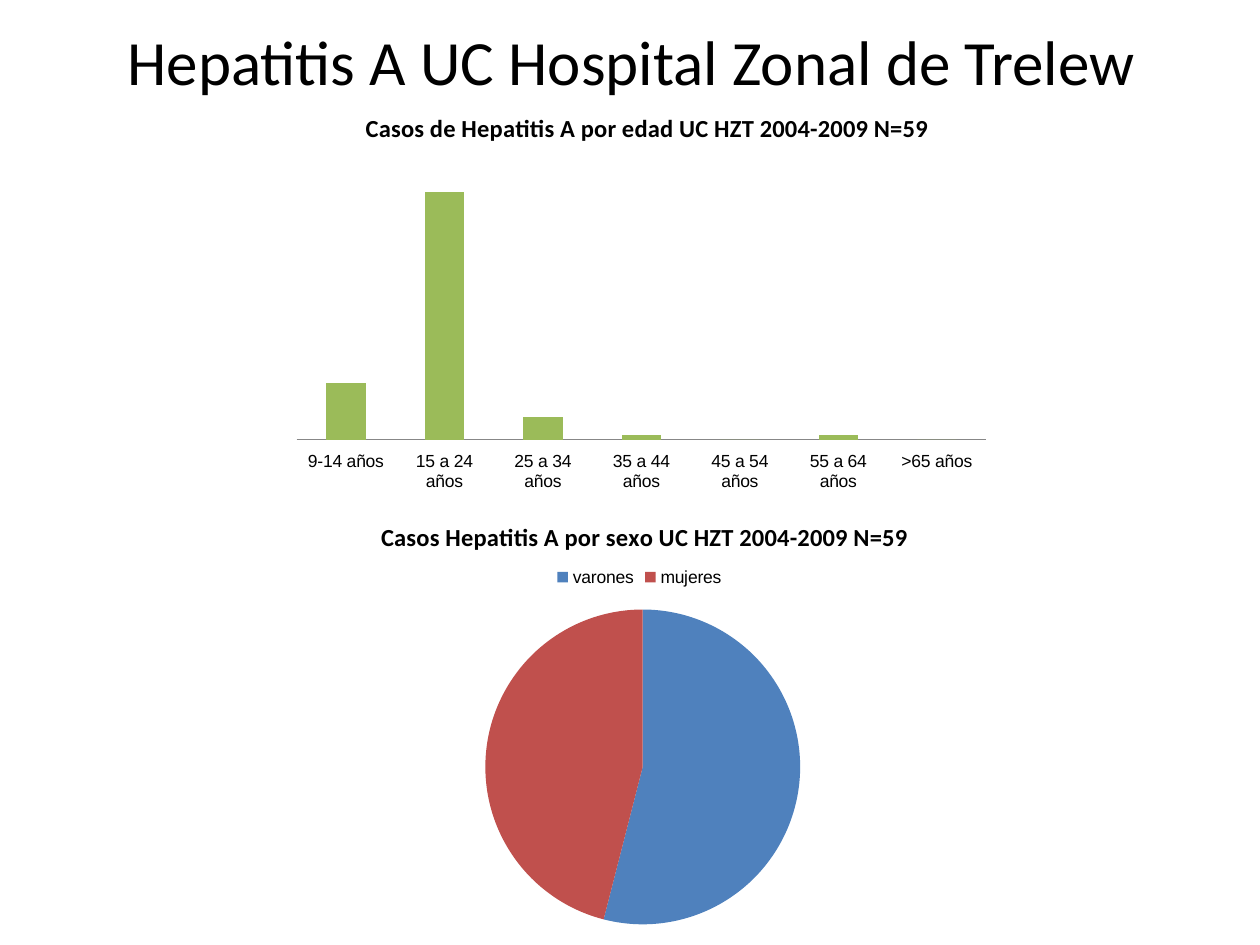
from dataclasses import dataclass

from lxml.etree import SubElement
from pptx import Presentation
from pptx.chart.chart import Chart
from pptx.chart.data import CategoryChartData
from pptx.dml.color import RGBColor
from pptx.enum.chart import XL_CHART_TYPE, XL_LEGEND_POSITION, XL_TICK_LABEL_POSITION, XL_TICK_MARK
from pptx.enum.text import MSO_ANCHOR, PP_ALIGN
from pptx.oxml import parse_xml
from pptx.oxml.ns import nsdecls, qn
from pptx.util import Inches, Pt

BLACK = RGBColor(0x00, 0x00, 0x00)
GRAY = RGBColor(0x87, 0x87, 0x87)
GREEN = RGBColor(0x9B, 0xBB, 0x59)
BLUE = RGBColor(0x4F, 0x81, 0xBD)
RED = RGBColor(0xC0, 0x50, 0x4D)


@dataclass
class ChartPanel:
    title: str
    kind: XL_CHART_TYPE
    box: tuple[float, float, float, float]
    title_at: dict[str, float]
    plot_at: dict[str, float]
    values: dict[str, int]


AGE = ChartPanel(
    "Casos de Hepatitis A por edad UC HZT 2004-2009 N=59",
    XL_CHART_TYPE.COLUMN_CLUSTERED,
    (2.24, 0.68, 5.7, 3.23),
    {"x": 0.11, "y": 0.05},
    {"x": 0.02, "y": 0.14, "w": 0.96, "h": 0.73},
    {"9-14 años": 23, "15 a 24 años": 100, "25 a 34 años": 9, "35 a 44 años": 2,
     "45 a 54 años": 0, "55 a 64 años": 2, ">65 años": 0},
)
SEX = ChartPanel(
    "Casos Hepatitis A por sexo UC HZT 2004-2009 N=59",
    XL_CHART_TYPE.PIE,
    (2.4, 3.91, 5.35, 3.57),
    {"x": 0.11, "y": 0.05},
    {"x": 0.27, "y": 0.26, "w": 0.47, "h": 0.7},
    {"varones": 54, "mujeres": 46},
)


def set_layout(parent, index: int, position: dict[str, float]) -> None:
    """Place a chart part by fractions of the chart's size."""
    for old in parent.findall(qn("c:layout")):
        parent.remove(old)
    layout = parse_xml(f"<c:layout {nsdecls('c')}/>")
    manual = SubElement(layout, qn("c:manualLayout"))
    if "w" in position:
        SubElement(manual, qn("c:layoutTarget"), val="inner")
    for axis in "xy":
        SubElement(manual, qn(f"c:{axis}Mode"), val="edge")
    for key, value in position.items():
        SubElement(manual, qn(f"c:{key}"), val=str(value))
    parent.insert(index, layout)


def add_panel(s, panel: ChartPanel) -> Chart:
    data = CategoryChartData()
    data.categories = list(panel.values)
    data.add_series("Series 1", list(panel.values.values()))
    chart = s.shapes.add_chart(panel.kind, *map(Inches, panel.box), data).chart
    chart.font.name = "Arial"
    chart.font.size = Pt(10)
    chart.font.color.rgb = BLACK

    chart.has_title = True
    r = chart.chart_title.text_frame.paragraphs[0].add_run()
    r.text = panel.title
    r.font.name = "Calibri"
    r.font.size = Pt(14)
    r.font.bold = True
    r.font.color.rgb = BLACK
    title = chart.chart_title._element
    set_layout(title, 1, panel.title_at)
    title.find(qn("c:overlay")).set("val", "1")

    plot_area = chart._chartSpace.chart.plotArea
    set_layout(plot_area, 0, panel.plot_at)
    plot_area.append(parse_xml(
        f'<c:spPr {nsdecls("c", "a")}><a:solidFill><a:srgbClr val="FFFFFF"/>'
        "</a:solidFill><a:ln><a:noFill/></a:ln></c:spPr>"))
    return chart


def add_age_chart(s) -> None:
    chart = add_panel(s, AGE)
    chart.has_legend = False
    plot = chart.plots[0]
    plot.gap_width = 150
    plot.vary_by_categories = False
    fill = plot.series[0].format.fill
    fill.solid()
    fill.fore_color.rgb = GREEN

    ages = chart.category_axis
    ages.major_tick_mark = XL_TICK_MARK.NONE
    ages.tick_label_position = XL_TICK_LABEL_POSITION.LOW
    ages.format.line.color.rgb = GRAY
    ages.format.line.width = Pt(0.75)
    cases = chart.value_axis
    cases.minimum_scale, cases.maximum_scale = 0, 120
    cases.has_major_gridlines = False
    cases.visible = False


def add_sex_chart(s) -> None:
    chart = add_panel(s, SEX)
    chart.has_legend = True
    chart.legend.position = XL_LEGEND_POSITION.TOP
    chart.legend.include_in_layout = True
    for i, color in enumerate((BLUE, RED)):
        fill = chart.plots[0].series[0].points[i].format.fill
        fill.solid()
        fill.fore_color.rgb = color


def add_title(s) -> None:
    sp = s.shapes.title
    sp.left, sp.top, sp.width, sp.height = map(Inches, (0.51, 0.03, 9, 0.89))
    tf = sp.text_frame
    tf.text = "Hepatitis A UC Hospital Zonal de Trelew"
    tf.vertical_anchor = MSO_ANCHOR.MIDDLE
    p = tf.paragraphs[0]
    p.alignment = PP_ALIGN.CENTER
    p.font.name = "Calibri"
    p.font.size = Pt(36)
    p.font.color.rgb = BLACK


def main() -> None:
    prs = Presentation()
    prs.slide_width, prs.slide_height = Inches(10), Inches(7.5)
    s = prs.slides.add_slide(prs.slide_layouts[5])
    add_title(s)
    add_age_chart(s)
    add_sex_chart(s)
    prs.save("out.pptx")


if __name__ == "__main__":
    main()
